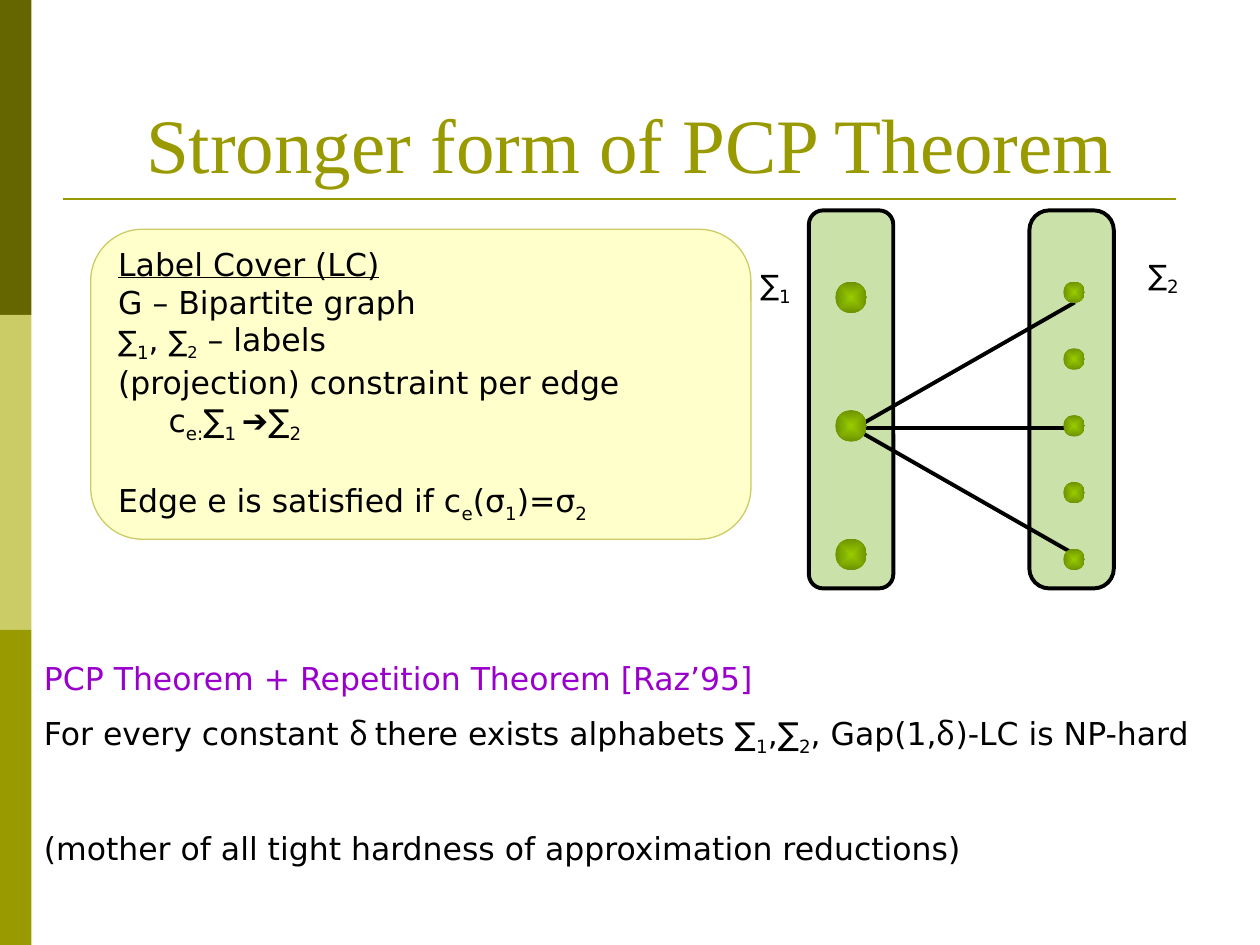
from lxml import etree
from pptx import Presentation
from pptx.dml.color import RGBColor
from pptx.enum.shapes import MSO_CONNECTOR, MSO_SHAPE
from pptx.enum.text import MSO_ANCHOR, PP_ALIGN
from pptx.oxml.ns import qn
from pptx.util import Inches, Pt

RECTANGLE, ROUNDED, OVAL = MSO_SHAPE.RECTANGLE, MSO_SHAPE.ROUNDED_RECTANGLE, MSO_SHAPE.OVAL
STRAIGHT = MSO_CONNECTOR.STRAIGHT
TOP, MIDDLE, BOTTOM = MSO_ANCHOR.TOP, MSO_ANCHOR.MIDDLE, MSO_ANCHOR.BOTTOM
LEFT, CENTER = PP_ALIGN.LEFT, PP_ALIGN.CENTER

BLACK = RGBColor(0x00, 0x00, 0x00)
OLIVE = RGBColor(0x99, 0x99, 0x00)
DARK_OLIVE = RGBColor(0x66, 0x66, 0x00)
LIGHT_OLIVE = RGBColor(0xCC, 0xCC, 0x66)
CREAM = RGBColor(0xFF, 0xFF, 0xCC)
PALE_GREEN = RGBColor(0xCA, 0xE2, 0xAA)
DOT_CENTER = RGBColor(0x99, 0xCC, 0x00)
DOT_EDGE = RGBColor(0x6D, 0x92, 0x00)
PURPLE = RGBColor(0x99, 0x00, 0xCC)

BODY_FONT = {"name": "DejaVu Sans", "size": Pt(18)}
PLAIN = {}
SUBSCRIPT = {"baseline": "-25000"}
SMALL = {"size": Pt(16)}
SMALL_SUBSCRIPT = SMALL | SUBSCRIPT
UNDERLINED = {"underline": True}
VIOLET = {"color": PURPLE}
ARROW = {"name": "Arial"}
DELTA = {"name": "Noto Sans CJK TC"}

LABEL_COVER = [
    ([("Label Cover (LC)", UNDERLINED)], {}),
    ([("G – Bipartite graph", PLAIN)], {}),
    ([("∑", SMALL), ("1", SUBSCRIPT), (", ", PLAIN), ("∑", SMALL),
      ("2", SMALL_SUBSCRIPT), (" – labels", PLAIN)], {}),
    ([("(projection) constraint per edge", PLAIN)], {}),
    ([("c", PLAIN), ("e:", SUBSCRIPT), ("∑", PLAIN), ("1 ", SUBSCRIPT),
      ("➔", ARROW), ("∑", PLAIN), ("2", SUBSCRIPT)], {"indent": Inches(0.4)}),
    ([("Edge e is satisfied if c", PLAIN), ("e", SUBSCRIPT), ("(σ", PLAIN),
      ("1", SUBSCRIPT), (")=σ", PLAIN), ("2", SUBSCRIPT)], {"space_before": Pt(21)}),
]
THEOREM = [
    ([("PCP Theorem + Repetition Theorem [Raz’95]", VIOLET)], {}),
    ([("For every constant ", PLAIN), ("δ ", DELTA), ("there exists alphabets ∑", PLAIN),
      ("1", SUBSCRIPT), (",∑", PLAIN), ("2", SUBSCRIPT), (", Gap(1,", PLAIN),
      ("δ", DELTA), (")-LC is NP-hard", PLAIN)], {"space_before": Pt(10)}),
    ([("(mother of all tight hardness of approximation reductions)", PLAIN)],
     {"space_before": Pt(41)}),
]


def apply_format(target, values):
    for name, value in values.items():
        setattr(target, name, value)


def write_paragraphs(text_frame, paragraphs, common):
    for index, (runs, values) in enumerate(paragraphs):
        paragraph = text_frame.paragraphs[0] if index == 0 else text_frame.add_paragraph()
        values = common | values
        indent = values.pop("indent", None)
        apply_format(paragraph, values)
        if indent:
            properties = paragraph._p.get_or_add_pPr()
            properties.set("marL", str(indent))
            properties.set("indent", "0")
        for text, style in runs:
            run = paragraph.add_run()
            run.text = text
            style = BODY_FONT | style
            run.font.color.rgb = style.pop("color", BLACK)
            baseline = style.pop("baseline", None)
            apply_format(run.font, style)
            if baseline:
                run._r.get_or_add_rPr().set("baseline", baseline)


def add_box(slide, kind, box, fill=None, line=None, line_width=0.75):
    shape = slide.shapes.add_shape(kind, *map(Inches, box))
    shape.shadow.inherit = False
    if fill is not None:
        shape.fill.solid()
        shape.fill.fore_color.rgb = fill
    if line is None:
        shape.line.fill.background()
    else:
        shape.line.color.rgb = line
        shape.line.width = Pt(line_width)
    return shape


def add_line(slide, start, end, color, width):
    connector = slide.shapes.add_connector(STRAIGHT, *map(Inches, start + end))
    connector.line.color.rgb = color
    connector.line.width = Pt(width)
    etree.SubElement(connector._element.spPr, qn("a:effectLst"))


def add_dot(slide, left, top, size):
    dot = add_box(slide, OVAL, (left, top, size, size))
    dot.fill.gradient()
    for stop, color in zip(dot.fill.gradient_stops, (DOT_CENTER, DOT_EDGE)):
        stop.color.rgb = color
    gradient = dot._element.spPr.find(qn("a:gradFill"))
    linear = gradient.find(qn("a:lin"))
    radial = etree.Element(qn("a:path"), {"path": "shape"})
    etree.SubElement(radial, qn("a:fillToRect"), dict.fromkeys("ltrb", "50000"))
    gradient.replace(linear, radial)


def add_side_band(slide, left, top, width, height):
    colors = (DARK_OLIVE, LIGHT_OLIVE, OLIVE)
    step = height / len(colors)
    for index, color in enumerate(colors):
        add_box(slide, RECTANGLE, (left, top + index * step, width, step), color)


def add_title(slide, left, top, width, height):
    title = slide.shapes.title
    apply_format(title, {"left": Inches(left), "top": Inches(top),
                         "width": Inches(width), "height": Inches(height)})
    title.text_frame.vertical_anchor = BOTTOM
    style = {"name": "Times New Roman", "size": Pt(44), "color": OLIVE}
    write_paragraphs(title.text_frame, [([("Stronger form of PCP Theorem", style)], {})],
                     {"alignment": CENTER})
    add_line(slide, (left, 1.58), (9.33, 1.58), OLIVE, 1.5)


def add_label_cover(slide, *box):
    shape = add_box(slide, ROUNDED, box, CREAM, LIGHT_OLIVE)
    shape.adjustments[0] = 0.167
    apply_format(shape.text_frame, {"word_wrap": True, "vertical_anchor": MIDDLE})
    write_paragraphs(shape.text_frame, LABEL_COVER, {"alignment": LEFT})


def add_theorem(slide, *box):
    text_frame = slide.shapes.add_textbox(*map(Inches, box)).text_frame
    apply_format(text_frame, {"word_wrap": True, "vertical_anchor": TOP,
                              "margin_top": Inches(0.48)})
    write_paragraphs(text_frame, THEOREM, {"alignment": LEFT})


def add_alphabet_label(slide, index, left, top):
    box = (left, top, 0.47, 0.33)
    text_frame = slide.shapes.add_textbox(*map(Inches, box)).text_frame
    text_frame.word_wrap = False
    write_paragraphs(text_frame, [([("∑", SMALL), (index, SUBSCRIPT)], {})],
                     {"alignment": CENTER, "line_spacing": 0.8})


def add_bipartite_graph(slide, left, top, width, height):
    panel_width = 0.67
    right = left + width - panel_width
    middle = top + 1.73
    sides = ((left, 0.167, 3, 0.25, 1.02), (right, 0.235, 5, 0.17, 0.53))

    for panel_left, rounding, *_ in sides:
        panel = add_box(slide, ROUNDED, (panel_left, top, panel_width, height),
                        PALE_GREEN, BLACK, 2.25)
        panel.adjustments[0] = rounding
    for rise in (1, 0, -1):
        add_line(slide, (left + 0.36, middle), (right + 0.36, middle + rise), BLACK, 2.25)
    for panel_left, _, count, size, step in sides:
        dot_left = panel_left + (panel_width - size) / 2 + 0.02 * (panel_left == right)
        first = middle - 0.02 - (count - 1) * step / 2 - size / 2
        for index in range(count):
            add_dot(slide, dot_left, first + index * step, size)
    add_alphabet_label(slide, "1", left - 0.5, top + 0.41)
    add_alphabet_label(slide, "2", right + 0.83, top + 0.33)


def main():
    presentation = Presentation()
    presentation.slide_width = Inches(10)
    presentation.slide_height = Inches(7.5)
    slide = presentation.slides.add_slide(presentation.slide_layouts[5])
    add_side_band(slide, 0, 0, 0.25, 7.5)
    add_title(slide, 0.5, 0.3, 9, 1.25)
    add_label_cover(slide, 0.72, 1.82, 5.24, 2.46)
    add_theorem(slide, 0.25, 4.75, 9.75, 2.75)
    add_bipartite_graph(slide, 6.42, 1.67, 2.42, 3)
    presentation.save("out.pptx")


if __name__ == "__main__":
    main()
